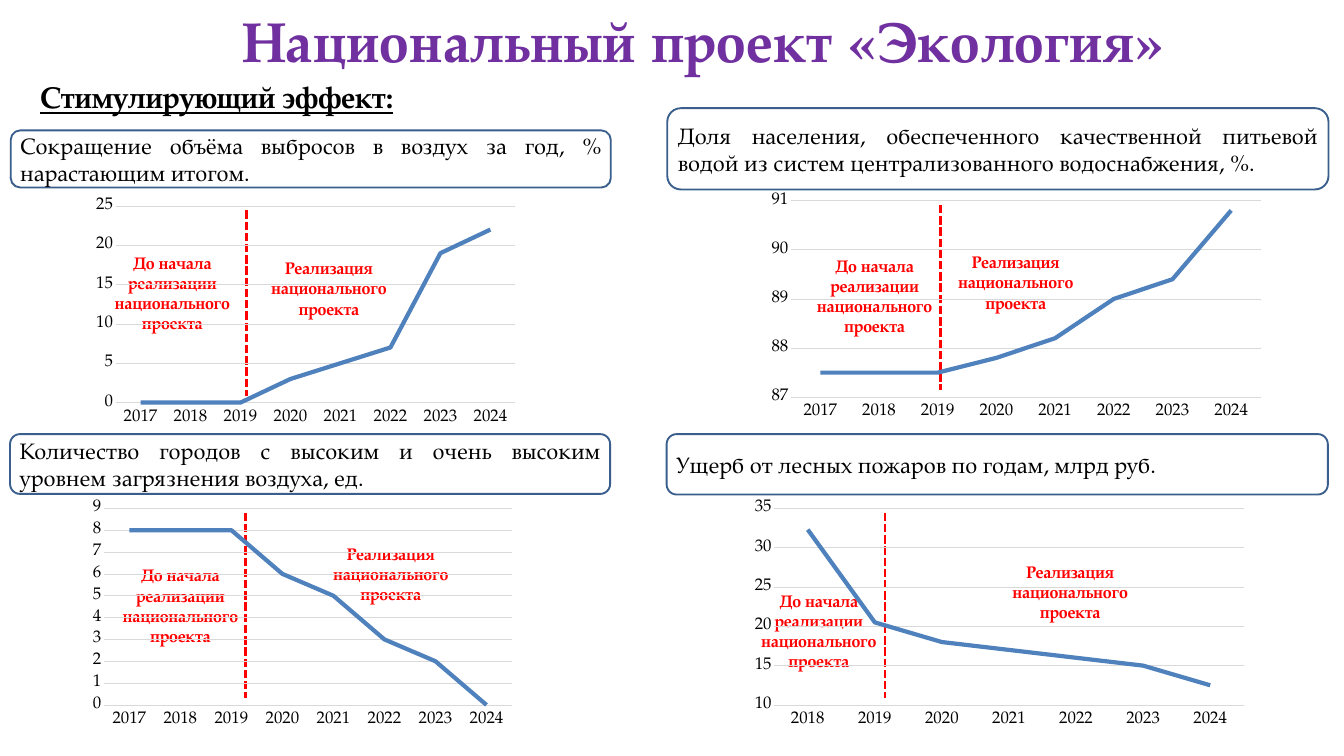
from lxml import etree
from pptx import Presentation
from pptx.chart.data import CategoryChartData
from pptx.dml.color import RGBColor
from pptx.enum import chart, dml, shapes, text
from pptx.oxml.ns import qn
from pptx.util import Inches, Pt

FONT = "TeX Gyre Pagella"
BLACK, RED, PURPLE = "000000", "FF0000", "7030A0"
BLUE, OUTLINE, GREY = "4F81BD", "3A5F8C", "D9D9D9"
BEFORE = "До начала реализации национального проекта"
DURING = "Реализация национального проекта"


def rgb(value):
    return RGBColor.from_string(value)


def style_font(font, size, color=BLACK, bold=False, underline=False):
    font.name, font.size = FONT, Pt(size)
    font.bold, font.underline = bold, underline
    font.color.rgb = rgb(color)


def write(sp, words, align=text.PP_ALIGN.LEFT, anchor=text.MSO_ANCHOR.TOP,
          wrap=True, fit=text.MSO_AUTO_SIZE.NONE, **font):
    tf = sp.text_frame
    tf.word_wrap, tf.auto_size, tf.vertical_anchor = wrap, fit, anchor
    p = tf.paragraphs[0]
    p.alignment = align
    r = p.add_run()
    r.text = words
    style_font(r.font, **font)
    return p


def add_title(s, left, top, width, height):
    sp = s.shapes.title
    sp.left, sp.top = Inches(left), Inches(top)
    sp.width, sp.height = Inches(width), Inches(height)
    p = write(sp, "Национальный проект «Экология»", align=text.PP_ALIGN.CENTER,
              size=60, color=PURPLE, bold=True)
    p.line_spacing = Pt(47.2)
    p.runs[0].font._element.set("spc", "110")
    tf = sp.text_frame
    tf.margin_left = tf.margin_top = tf.margin_right = tf.margin_bottom = 0


def add_subtitle(s, left, top, width, height):
    sp = s.shapes.add_textbox(Inches(left), Inches(top), Inches(width), Inches(height))
    write(sp, "Стимулирующий эффект:", wrap=False,
          fit=text.MSO_AUTO_SIZE.SHAPE_TO_FIT_TEXT, size=32, bold=True, underline=True)


def add_heading(s, box, words):
    sp = s.shapes.add_shape(shapes.MSO_SHAPE.ROUNDED_RECTANGLE, *map(Inches, box))
    sp.shadow.inherit = False
    sp.fill.background()
    sp.line.color.rgb, sp.line.width = rgb(OUTLINE), Pt(2)
    write(sp, words, align=text.PP_ALIGN.JUSTIFY, anchor=text.MSO_ANCHOR.MIDDLE, size=24)


def add_period(s, left, top, height, words):
    sp = s.shapes.add_textbox(Inches(left), Inches(top), Inches(2.37), Inches(height))
    write(sp, words, align=text.PP_ALIGN.CENTER,
          fit=text.MSO_AUTO_SIZE.SHAPE_TO_FIT_TEXT, size=18, color=RED, bold=True)


def add_divider(s, x, top):
    line = s.shapes.add_connector(shapes.MSO_CONNECTOR.STRAIGHT, Inches(x), Inches(top),
                                  Inches(x), Inches(top + 2.76))
    line.line.color.rgb, line.line.width = rgb(RED), Pt(3)
    line.line.dash_style = dml.MSO_LINE.SQUARE_DOT
    etree.SubElement(line._element.spPr, qn("a:effectLst"))


def add_line_chart(s, box, first_year, values, low, high, step):
    data = CategoryChartData()
    data.categories = [str(first_year + i) for i in range(len(values))]
    data.add_series("Series 1", values)
    ch = s.shapes.add_chart(chart.XL_CHART_TYPE.LINE, *map(Inches, box), data).chart
    ch.has_legend = ch.has_title = False
    style_font(ch.font, 18)
    plot = ch.plots[0]
    plot.vary_by_categories = False
    series = plot.series[0]
    series.smooth = False
    series.marker.style = chart.XL_MARKER_STYLE.NONE
    series.format.line.color.rgb, series.format.line.width = rgb(BLUE), Pt(4.5)

    # Axes and grid
    years, scale = ch.category_axis, ch.value_axis
    for axis in (years, scale):
        axis.major_tick_mark = axis.minor_tick_mark = chart.XL_TICK_MARK.NONE
        style_font(axis.tick_labels.font, 18)
    years.tick_label_position = chart.XL_TICK_LABEL_POSITION.LOW
    scale.minimum_scale, scale.maximum_scale, scale.major_unit = low, high, step
    scale.tick_labels.number_format = "General"
    scale.tick_labels.number_format_is_linked = False
    scale.has_major_gridlines = True
    scale.format.line.fill.background()
    for line in (years.format.line, scale.major_gridlines.format.line):
        line.color.rgb, line.width = rgb(GREY), Pt(0.75)


def add_panel(s, heading, words, box, before, during, divider, **series):
    """Heading above a chart; labels and divider are offsets from the chart box."""
    left, top = box[:2]
    add_heading(s, heading, words)
    add_period(s, left + before[0], top + before[1], 1.31, BEFORE)
    add_period(s, left + during[0], top + during[1], 1.01, DURING)
    add_divider(s, left + divider, top + 0.26)
    # The chart lies over the labels
    add_line_chart(s, box, **series)


PANELS = [
    dict(heading=(0.16, 1.94, 8.93, 0.85),
         words="Сокращение объёма выбросов в воздух за год, % нарастающим итогом.",
         box=(1.3, 2.87, 6.5, 3.54), before=(0.08, 0.84), during=(2.41, 0.92), divider=2.37,
         first_year=2017, values=(0, 0, 0, 3, 5, 7, 19, 22), low=0, high=25, step=5),
    dict(heading=(9.93, 1.61, 9.84, 1.21),
         words="Доля населения, обеспеченного качественной питьевой водой "
               "из систем централизованного водоснабжения, %.",
         box=(11.33, 2.79, 7.58, 3.54), before=(0.5, 0.96), during=(2.6, 0.91), divider=2.67,
         first_year=2017, values=(87.5, 87.5, 87.5, 87.8, 88.2, 89, 89.4, 90.8),
         low=87, high=91, step=1),
    dict(heading=(0.15, 6.46, 8.93, 0.89),
         words="Количество городов с высоким и очень высоким уровнем загрязнения воздуха, ед.",
         box=(1.25, 7.37, 6.5, 3.54), before=(0.25, 0.99), during=(3.38, 0.67), divider=2.4,
         first_year=2017, values=(8, 8, 8, 6, 5, 3, 2, 0), low=0, high=9, step=1),
    dict(heading=(9.92, 6.46, 9.84, 0.9),
         words="Ущерб от лесных пожаров по годам, млрд руб.",
         box=(11.08, 7.37, 7.58, 3.54), before=(-0.08, 1.37), during=(3.66, 0.94), divider=2.09,
         first_year=2018, values=(32.3, 20.5, 18, 17, 16, 15, 12.5), low=10, high=35, step=5),
]


def main():
    prs = Presentation()
    prs.slide_width, prs.slide_height = Inches(20), Inches(11.25)
    s = prs.slides.add_slide(prs.slide_layouts[5])
    add_title(s, 0.92, 0.44, 19.08, 0.72)
    add_subtitle(s, 0.5, 1.12, 6.03, 0.64)
    for panel in PANELS:
        add_panel(s, **panel)
    prs.save("out.pptx")


if __name__ == "__main__":
    main()
